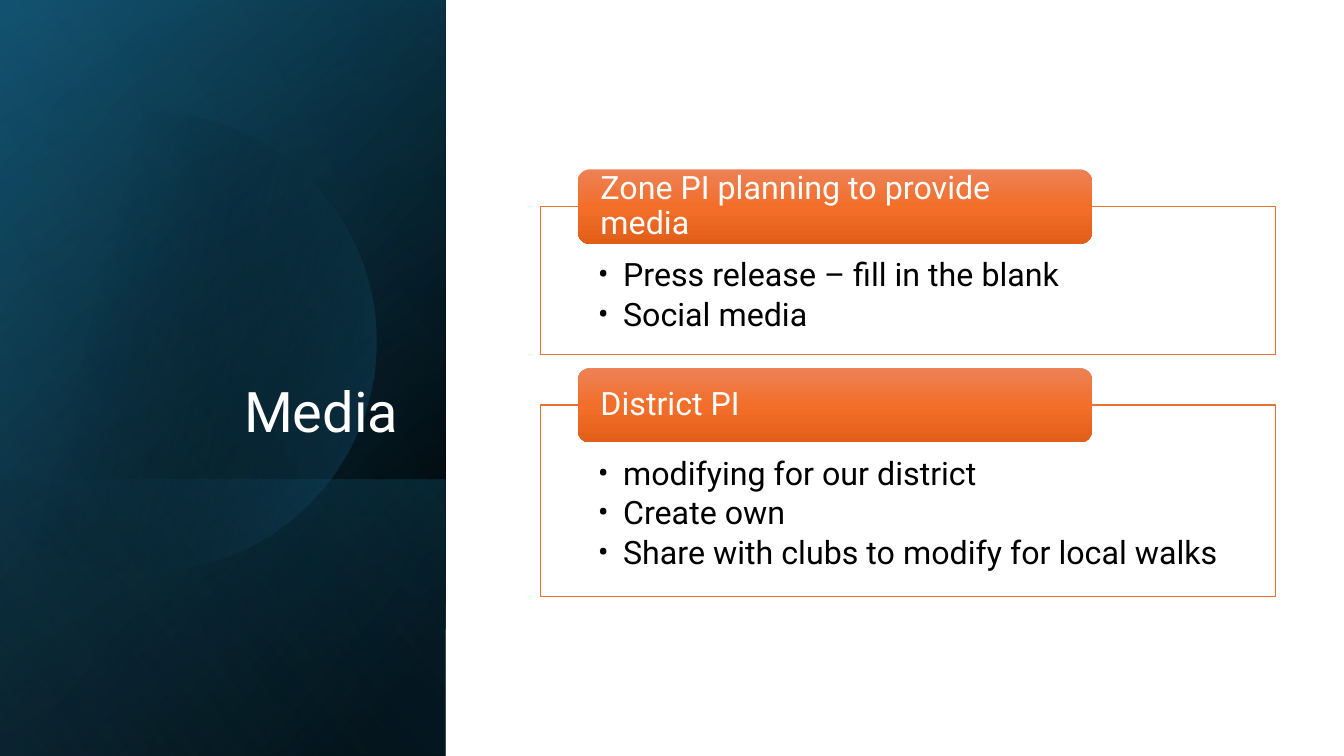
from math import acos, cos, sin
from pptx import Presentation
from pptx.util import Inches, Pt
from pptx.dml.color import RGBColor
from pptx.enum.shapes import MSO_SHAPE
from pptx.enum.text import MSO_ANCHOR, PP_ALIGN
from pptx.oxml import parse_xml
from pptx.oxml.ns import nsdecls

# Content
TITLE = "Media"
CARDS = [
    ("Zone PI planning to provide media", 1.47,
     ["Press release – fill in the blank", "Social media"]),
    ("District PI", 1.9,
     ["modifying for our district", "Create own",
      "Share with clubs to modify for local walks"]),
]

THEME = {
    "font": "Roboto", "title": 40, "text": 23,
    "white": "FFFFFF", "black": "000000", "edge": "E97132",
    # Gradient stops: position, colour, opacity (all in percent)
    "tag": [(0, "ED8257", 100), (50, "F26E29", 100), (100, "E25F1A", 100)],
    "disc": [(29, "000000", 0), (100, "156082", 43)],
}

# Panel layers: top, height, gradient angle, stops
WIDE, HIGH = 4.42, 7.5
LAYERS = [
    (0, HIGH, 50, [(8, "000000", 100), (100, "104862", 100)]),
    (0, HIGH, 30, [(0, "000000", 0), (99, "156082", 46)]),
    (4.76, 2.74, 130, [(2, "156082", 29), (100, "000000", 30)]),
]
GLOW = (0, HIGH, 120, [(0, "000000", 0), (99, "46B1E1", 11)])

deck = Presentation()
deck.slide_width, deck.slide_height = Inches(13.33), Inches(HIGH)
slide = deck.slides.add_slide(deck.slide_layouts[5])
shapes = slide.shapes


def shade(shape, stops, angle):
    """Give a shape a linear gradient, no line and no shadow."""
    marks = "".join(
        f'<a:gs pos="{pos * 1000}"><a:srgbClr val="{tone}">'
        f'<a:alpha val="{alpha * 1000}"/></a:srgbClr></a:gs>'
        for pos, tone, alpha in stops)
    shape.element.spPr.insert(2, parse_xml(
        f'<a:gradFill {nsdecls("a")} rotWithShape="1"><a:gsLst>{marks}</a:gsLst>'
        f'<a:lin ang="{angle * 60000}" scaled="0"/></a:gradFill>'))
    shape.line.fill.background()
    shape.shadow.inherit = False


def layer(top, tall, angle, stops):
    """Add a panel layer, turned a quarter and mirrored."""
    left = (WIDE - tall) / 2
    rect = shapes.add_shape(MSO_SHAPE.RECTANGLE, Inches(left), Inches(top - left),
                            Inches(tall), Inches(WIDE))
    rect.rotation = 90
    rect.element.spPr.xfrm.set("flipH", "1")
    shade(rect, stops, angle)


def write(para, text, size, tone):
    para.line_spacing = 0.9
    run = para.add_run()
    run.text = text
    run.font.name, run.font.size = THEME["font"], Pt(size)
    run.font.color.rgb = RGBColor.from_string(THEME[tone])


def inset(frame, left, top, right, low):
    frame.word_wrap = True
    frame.margin_left, frame.margin_right = Inches(left), Inches(right)
    frame.margin_top, frame.margin_bottom = Inches(top), Inches(low)


# Dark panel
for item in LAYERS:
    layer(*item)

# Disc, cut off by the left edge of the slide
MID_X, MID_Y, RADIUS, STEPS = 1.45, 3.39, 2.28, 90
reach = acos(-MID_X / RADIUS)
arc = [(Inches(MID_X + RADIUS * cos(turn)), Inches(MID_Y + RADIUS * sin(turn)))
       for turn in (reach * (2 * i / STEPS - 1) for i in range(STEPS + 1))]
pen = shapes.build_freeform(*arc[0])
pen.add_line_segments(arc[1:], close=True)
shade(pen.convert_to_shape(), THEME["disc"], 14)

layer(*GLOW)

# Title, in front of the panel
title = shapes.title
title.left, title.top = Inches(0.64), Inches(1.84)
title.width, title.height = Inches(3.41), Inches(2.62)
title.text_frame.vertical_anchor = MSO_ANCHOR.BOTTOM
inset(title.text_frame, 0.1, 0.05, 0.1, 0.05)
head = title.text_frame.paragraphs[0]
head.alignment = PP_ALIGN.RIGHT
write(head, TITLE, THEME["title"], "white")
shapes.element.append(title.element)

# Cards with a tag across the top edge
LEFT, WIDTH, GAP, TAG = 5.36, 7.29, 0.5, 0.74
top = 2.05
for name, tall, points in CARDS:
    box = shapes.add_shape(MSO_SHAPE.RECTANGLE, Inches(LEFT), Inches(top),
                           Inches(WIDTH), Inches(tall))
    box.fill.solid()
    box.fill.fore_color.rgb = RGBColor.from_string(THEME["white"])
    box.line.color.rgb = RGBColor.from_string(THEME["edge"])
    box.line.width = Pt(1)
    box.shadow.inherit = False
    frame = box.text_frame
    frame.vertical_anchor = MSO_ANCHOR.TOP
    inset(frame, 0.57, 0.52, 0.3, 0.1)
    for i, point in enumerate(points):
        para = frame.add_paragraph() if i else frame.paragraphs[0]
        para.alignment = PP_ALIGN.LEFT
        para.space_after = Pt(3.4)
        props = para._p.get_or_add_pPr()
        props.set("marL", str(Inches(0.25)))
        props.set("indent", str(-Inches(0.25)))
        for mark in (f'buFont {nsdecls("a")} typeface="{THEME["font"]}"',
                     f'buChar {nsdecls("a")} char="•"'):
            props.append(parse_xml(f"<a:{mark}/>"))
        para.font.size = Pt(THEME["text"])
        write(para, point, THEME["text"], "black")

    tag = shapes.add_shape(MSO_SHAPE.ROUNDED_RECTANGLE, Inches(LEFT + 0.37),
                           Inches(top - TAG / 2), Inches(WIDTH * 0.7), Inches(TAG))
    shade(tag, THEME["tag"], 90)
    tag.text_frame.vertical_anchor = MSO_ANCHOR.MIDDLE
    inset(tag.text_frame, 0.19, 0, 0.19, 0)
    label = tag.text_frame.paragraphs[0]
    label.alignment = PP_ALIGN.LEFT
    write(label, name, THEME["text"], "white")
    top += tall + GAP

deck.save("out.pptx")
